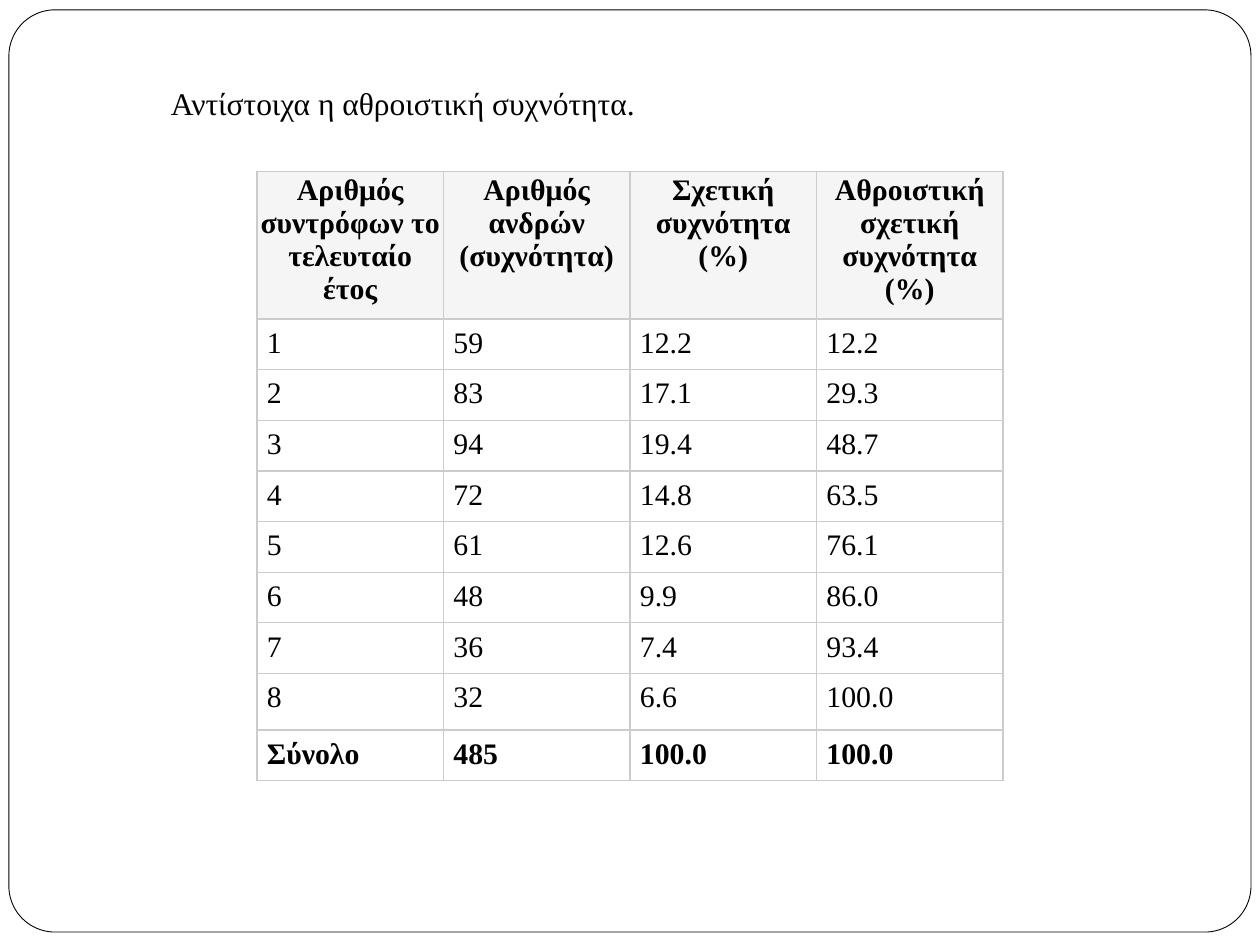
from dataclasses import dataclass

from lxml import etree
from pptx import Presentation
from pptx.dml.color import RGBColor
from pptx.enum import shapes, text
from pptx.oxml import ns
from pptx.util import Cm, Pt


@dataclass(frozen=True)
class Theme:
    font: str = "Times New Roman"
    ink: str = "000000"
    paper: str = "FFFFFF"
    header: str = "F5F5F5"
    grid: str = "CCCCCC"
    title_size: float = 18
    table_size: float = 17
    frame_width: float = 0.5
    grid_width: float = 0.75


THEME = Theme()

HEADERS = [
    "Αριθμός συντρόφων το τελευταίο έτος",
    "Αριθμός ανδρών (συχνότητα)",
    "Σχετική συχνότητα (%)",
    "Αθροιστική σχετική συχνότητα (%)",
]
ROWS = [
    ("1", "59", "12.2", "12.2"),
    ("2", "83", "17.1", "29.3"),
    ("3", "94", "19.4", "48.7"),
    ("4", "72", "14.8", "63.5"),
    ("5", "61", "12.6", "76.1"),
    ("6", "48", "9.9", "86.0"),
    ("7", "36", "7.4", "93.4"),
    ("8", "32", "6.6", "100.0"),
    ("Σύνολο", "485", "100.0", "100.0"),
]
HEADER_HEIGHT, ROW_HEIGHT, LAST_VALUE_HEIGHT = 2.24, 1.02, 1.14


def rgb(color):
    return RGBColor.from_string(color)


def write(tf, words, size, bold=False, align=text.PP_ALIGN.LEFT):
    """Put one formatted paragraph in a text frame."""
    tf.word_wrap = True
    p = tf.paragraphs[0]
    p.alignment = align
    r = p.add_run()
    r.text = words
    r.font.name = THEME.font
    r.font.size = Pt(size)
    r.font.bold = bold
    r.font.color.rgb = rgb(THEME.ink)


def set_borders(cell):
    """Draw the grid line on all four sides; borders precede the fill."""
    tc_pr = cell._tc.get_or_add_tcPr()
    for i, side in enumerate(("lnL", "lnR", "lnT", "lnB")):
        ln = etree.Element(ns.qn(f"a:{side}"), w=str(Pt(THEME.grid_width)))
        fill = etree.SubElement(ln, ns.qn("a:solidFill"))
        etree.SubElement(fill, ns.qn("a:srgbClr"), val=THEME.grid)
        tc_pr.insert(i, ln)


def fill_cell(cell, words, is_header, bold):
    cell.fill.solid()
    cell.fill.fore_color.rgb = rgb(THEME.header if is_header else THEME.paper)
    set_borders(cell)
    across, down = (0.05, 0.05) if is_header else (0.2, 0.15)
    cell.margin_left = cell.margin_right = Cm(across)
    cell.margin_top = cell.margin_bottom = Cm(down)
    align = text.PP_ALIGN.CENTER if is_header else text.PP_ALIGN.LEFT
    write(cell.text_frame, words, THEME.table_size, bold, align)


def add_frame(s, left, top, width, height):
    sp = s.shapes.add_shape(shapes.MSO_SHAPE.ROUNDED_RECTANGLE,
                            Cm(left), Cm(top), Cm(width), Cm(height))
    sp.adjustments[0] = 0.05
    sp.shadow.inherit = False
    sp.fill.solid()
    sp.fill.fore_color.rgb = rgb(THEME.paper)
    sp.line.color.rgb = rgb(THEME.ink)
    sp.line.width = Pt(THEME.frame_width)


def add_heading(s, left, top, width, height):
    sp = s.shapes.add_textbox(Cm(left), Cm(top), Cm(width), Cm(height))
    sp.text_frame.auto_size = text.MSO_AUTO_SIZE.SHAPE_TO_FIT_TEXT
    write(sp.text_frame, "Αντίστοιχα η αθροιστική συχνότητα.",
          THEME.title_size, align=text.PP_ALIGN.CENTER)


def add_frequency_table(s, left, top, width):
    heights = [HEADER_HEIGHT] + [ROW_HEIGHT] * len(ROWS)
    heights[-2] = LAST_VALUE_HEIGHT
    table = s.shapes.add_table(len(heights), len(HEADERS), Cm(left), Cm(top),
                               Cm(width), Cm(sum(heights))).table
    table.horz_banding = False
    for column in table.columns:
        column.width = Cm(width / len(HEADERS))
    for row, height in zip(table.rows, heights):
        row.height = Cm(height)
    for i, values in enumerate([HEADERS] + ROWS):
        for j, value in enumerate(values):
            fill_cell(table.cell(i, j), value, is_header=i == 0,
                      bold=i in (0, len(ROWS)))


def main():
    prs = Presentation()
    prs.slide_width, prs.slide_height = Cm(25.4), Cm(19.05)
    s = prs.slides.add_slide(prs.slide_layouts[6])

    # Rounded page border
    add_frame(s, 0.18, 0.2, 25.04, 18.59)
    # Introductory line
    add_heading(s, 1.98, 1.57, 12.29, 1.02)
    # Frequencies, relative and cumulative
    add_frequency_table(s, 5.18, 3.45, 15.04)

    prs.save("out.pptx")


if __name__ == "__main__":
    main()
